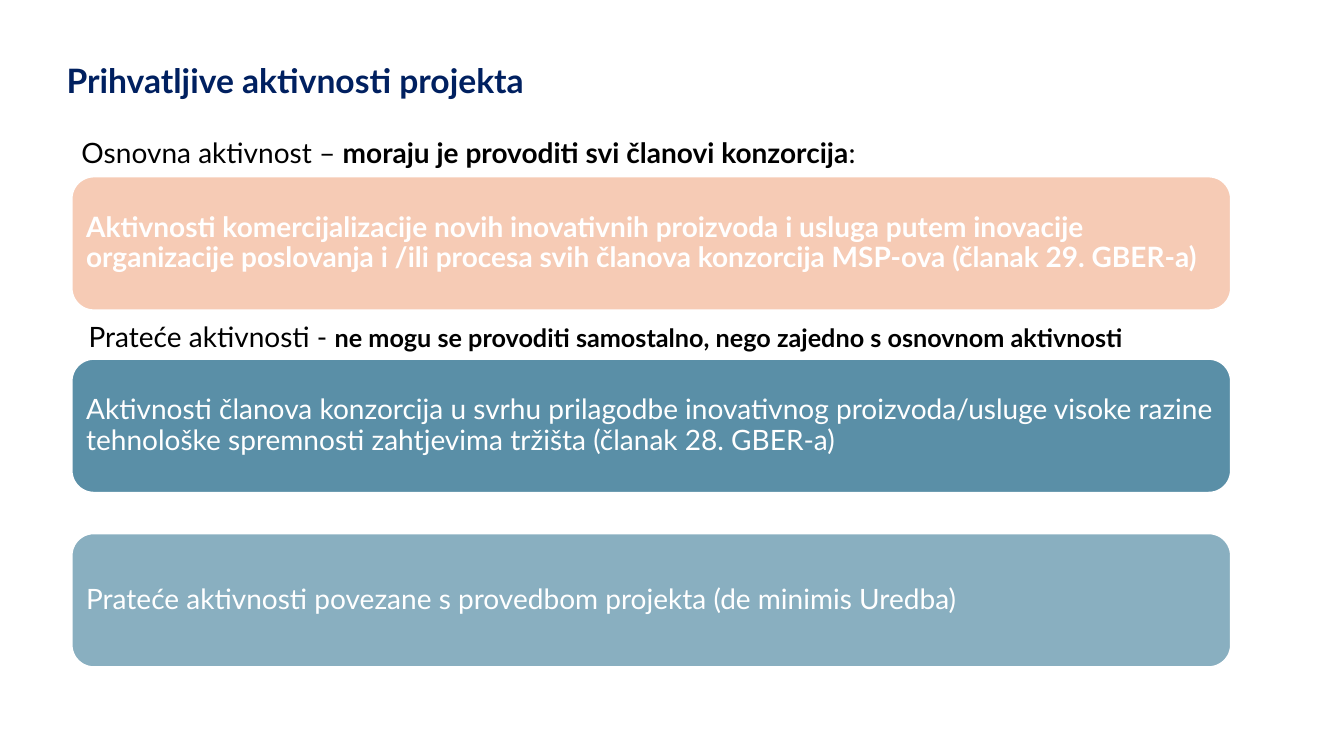
from dataclasses import dataclass

from lxml.etree import SubElement
from pptx import Presentation
from pptx.dml.color import RGBColor
from pptx.enum.shapes import MSO_SHAPE
from pptx.enum.text import MSO_ANCHOR, MSO_AUTO_SIZE, PP_ALIGN
from pptx.oxml.ns import qn
from pptx.slide import Slide
from pptx.text.text import _Run
from pptx.util import Inches, Pt

FONT = "Lato"
WIDE, HIGH = Inches(13.33), Inches(7.5)
COL, ROW = WIDE / 1333, HIGH / 750  # grid of hundredths of an inch
LEFT, SPAN, TALL = 71, 1150, 133
COLORS = {
    "navy": "002060",
    "black": "000000",
    "white": "FFFFFF",
    "peach": "F6C6AD",
    "teal": "156082",
}


@dataclass
class Phrase:
    text: str
    size: int = 20
    bold: bool = False


@dataclass
class Label:
    left: int
    top: int
    width: int
    words: list[Phrase]


@dataclass
class Card:
    top: int
    color: str
    alpha: int
    phrase: Phrase


LABELS = [
    Label(71, 130, 1031, [
        Phrase("Osnovna aktivnost – "),
        Phrase("moraju je provoditi svi članovi konzorcija", bold=True),
        Phrase(":"),
    ]),
    Label(78, 312, 1185, [
        Phrase("Prateće aktivnosti - "),
        Phrase("ne mogu se provoditi samostalno, nego zajedno s osnovnom aktivnosti",
               18, True),
    ]),
]
CARDS = [
    Card(175, "peach", 90, Phrase(
        "Aktivnosti komercijalizacije novih inovativnih proizvoda i usluga "
        "putem inovacije organizacije poslovanja i /ili procesa svih članova "
        "konzorcija MSP-ova (članak 29. GBER-a)", bold=True)),
    Card(356, "teal", 70, Phrase(
        "Aktivnosti članova konzorcija u svrhu prilagodbe inovativnog "
        "proizvoda/usluge visoke razine tehnološke spremnosti zahtjevima "
        "tržišta (članak 28. GBER-a)")),
    Card(529, "teal", 50, Phrase(
        "Prateće aktivnosti povezane s provedbom projekta (de minimis Uredba)")),
]


def shade(name: str) -> RGBColor:
    return RGBColor.from_string(COLORS[name])


def grid(left: int, top: int, width: int, height: int) -> tuple[int, ...]:
    """Turn grid columns and rows into slide lengths."""
    return round(left * COL), round(top * ROW), round(width * COL), round(height * ROW)


def style(run: _Run, phrase: Phrase, color: str) -> None:
    run.font.name = FONT
    run.font.size = Pt(phrase.size)
    run.font.bold = phrase.bold
    run.font.color.rgb = shade(color)


def add_title(slide: Slide, phrase: Phrase) -> None:
    title = slide.shapes.title
    title.left, title.top, title.width, title.height = grid(56, 34, 677, 96)
    frame = title.text_frame
    frame.text = phrase.text
    frame.auto_size = MSO_AUTO_SIZE.NONE
    frame.vertical_anchor = MSO_ANCHOR.MIDDLE
    line = frame.paragraphs[0]
    line.alignment = PP_ALIGN.LEFT
    line.line_spacing = 0.9
    style(line.runs[0], phrase, "navy")


def add_label(slide: Slide, label: Label) -> None:
    box = slide.shapes.add_textbox(*grid(label.left, label.top, label.width, 44))
    frame = box.text_frame
    frame.word_wrap = True
    frame.auto_size = MSO_AUTO_SIZE.SHAPE_TO_FIT_TEXT
    for phrase in label.words:
        run = frame.paragraphs[0].add_run()
        run.text = phrase.text
        style(run, phrase, "black")


def add_card(slide: Slide, card: Card) -> None:
    box = slide.shapes.add_shape(
        MSO_SHAPE.ROUNDED_RECTANGLE, *grid(LEFT, card.top, SPAN, TALL))
    box.shadow.inherit = False
    box.fill.solid()
    box.fill.fore_color.rgb = shade(card.color)
    tint = box.element.spPr.find(qn("a:solidFill"))[0]
    SubElement(tint, qn("a:alpha"), val=str(card.alpha * 1000))
    box.line.color.rgb = shade("white")
    box.line.width = Pt(1.5)
    frame = box.text_frame
    frame.text = card.phrase.text
    frame.word_wrap = True
    frame.vertical_anchor = MSO_ANCHOR.MIDDLE
    frame.margin_left = frame.margin_right = Inches(0.08)
    frame.margin_top = frame.margin_bottom = Inches(0.08)
    line = frame.paragraphs[0]
    line.alignment = PP_ALIGN.LEFT
    line.line_spacing = 0.9
    style(line.runs[0], card.phrase, "white")


def main() -> None:
    deck = Presentation()
    deck.slide_width, deck.slide_height = WIDE, HIGH
    slide = deck.slides.add_slide(deck.slide_layouts[5])
    add_title(slide, Phrase("Prihvatljive aktivnosti projekta", 24, True))
    for card in CARDS:
        add_card(slide, card)
    for label in LABELS:
        add_label(slide, label)
    deck.save("out.pptx")


if __name__ == "__main__":
    main()
